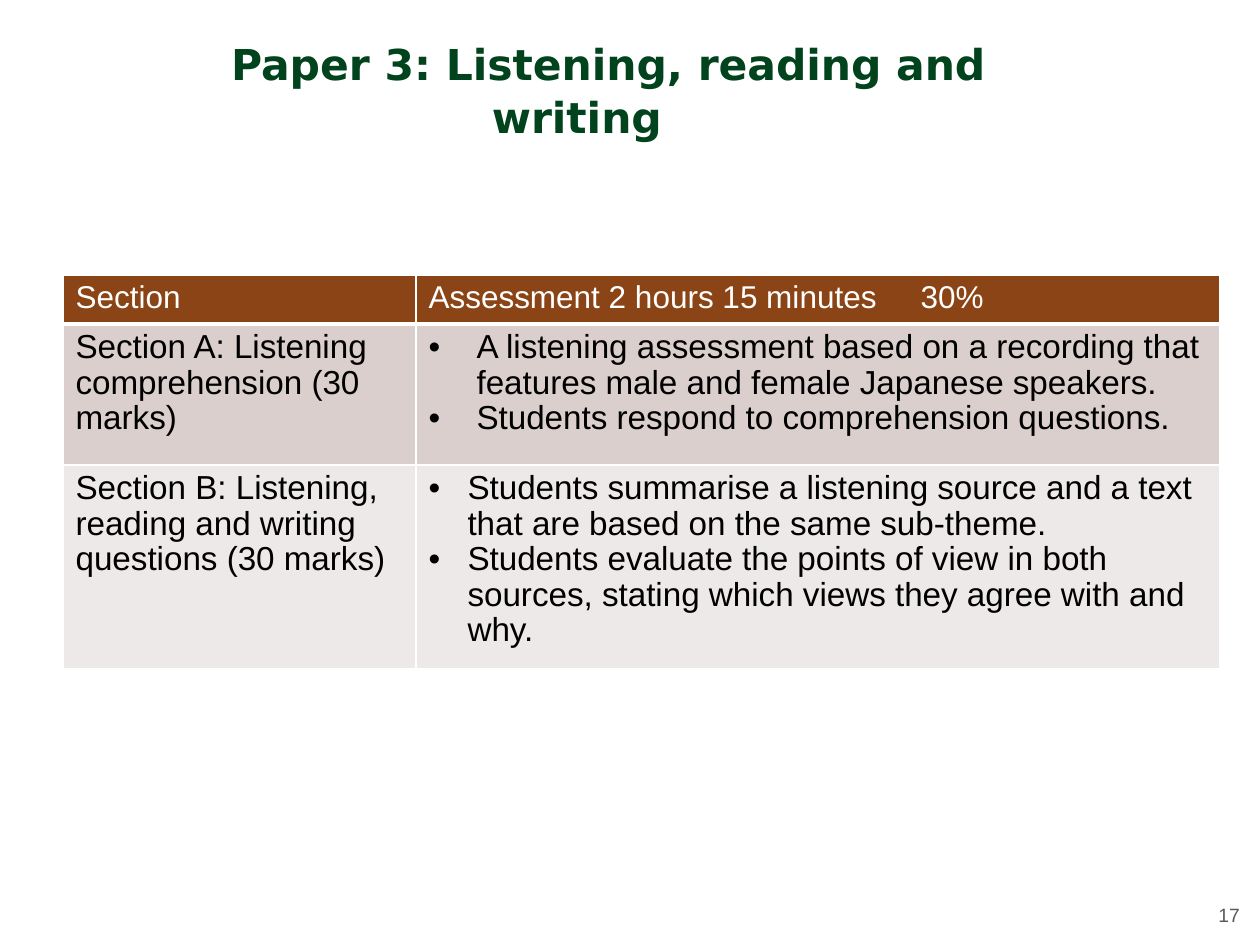
from lxml.etree import SubElement
from pptx import Presentation
from pptx.dml.color import RGBColor
from pptx.enum.text import PP_ALIGN
from pptx.oxml.ns import qn
from pptx.util import Pt

PX = 7257.6
COLORS = {
    "title": "00431C", "number": "595959", "white": "FFFFFF", "text": "000000",
    "header": "8A4415", "dark": "DACFCC", "light": "EDE9E8",
}
TITLE = "\tPaper 3: Listening, reading and writing"
PAGE_NUMBER = "17"
COLUMNS = [353, 804]
ROWS = [
    {"height": 47, "fill": "header", "color": "white", "size": 18, "tab": 492,
     "cells": [["Section"], ["Assessment 2 hours 15 minutes\t30%"]]},
    {"height": 141, "fill": "dark", "color": "text", "size": 19, "indent": 48,
     "cells": [
         ["Section A: Listening comprehension (30 marks)"],
         ["A listening assessment based on a recording that features male "
          "and female Japanese speakers.",
          "Students respond to comprehension questions."]]},
    {"height": 197, "fill": "light", "color": "text", "size": 19, "indent": 39,
     "cells": [
         ["Section B: Listening, reading and writing questions (30 marks)"],
         ["Students summarise a listening source and a text that are based "
          "on the same sub-theme.",
          "Students evaluate the points of view in both sources, stating "
          "which views they agree with and why."]]},
]


def px(value):
    return round(value * PX)


def write(para, text, size, color, font="Arial", bold=False,
          align=PP_ALIGN.LEFT, spacing=1.0, indent=0, tab=0):
    para.alignment = align
    para.line_spacing = spacing
    properties = para._p.get_or_add_pPr()
    if indent:
        properties.set("marL", str(px(indent)))
        properties.set("indent", str(-px(indent)))
        SubElement(properties, qn("a:buFont"), typeface="Arial")
        SubElement(properties, qn("a:buChar"), char="•")
    if tab:
        stops = SubElement(properties, qn("a:tabLst"))
        SubElement(stops, qn("a:tab"), pos=str(px(tab)), algn="l")
    span = para.add_run()
    span.text = text
    span.font.name = font
    span.font.size = Pt(size)
    span.font.bold = bold
    span.font.color.rgb = RGBColor.from_string(COLORS[color])


def add_text(page, area, text, margin=0, **style):
    box = page.shapes.add_textbox(*map(px, area))
    frame = box.text_frame
    frame.word_wrap = True
    frame.margin_left = frame.margin_right = px(margin)
    frame.margin_top = frame.margin_bottom = px(margin / 2)
    write(frame.paragraphs[0], text, **style)


def add_borders(cell, bottom):
    properties = cell._tc.get_or_add_tcPr()
    widths = {"a:lnL": 1, "a:lnR": 1, "a:lnT": 1, "a:lnB": bottom}
    for position, (side, width) in enumerate(widths.items()):
        line = properties.makeelement(qn(side), {"w": str(Pt(width))})
        fill = SubElement(line, qn("a:solidFill"))
        SubElement(fill, qn("a:srgbClr"), val=COLORS["white"])
        properties.insert(position, line)


def add_assessment_table(page):
    heights = [row["height"] for row in ROWS]
    table = page.shapes.add_table(
        len(ROWS), len(COLUMNS), px(63), px(275),
        px(sum(COLUMNS)), px(sum(heights))).table
    for column, width in zip(table.columns, COLUMNS):
        column.width = px(width)
    for r, row in enumerate(ROWS):
        table.rows[r].height = px(row["height"])
        for c, texts in enumerate(row["cells"]):
            cell = table.cell(r, c)
            cell.fill.solid()
            cell.fill.fore_color.rgb = RGBColor.from_string(COLORS[row["fill"]])
            add_borders(cell, bottom=3 if r == 0 else 1)
            frame = cell.text_frame
            for i, text in enumerate(texts):
                para = frame.add_paragraph() if i else frame.paragraphs[0]
                write(para, text, row["size"], row["color"], spacing=0.96,
                      indent=row.get("indent", 0) if c else 0,
                      tab=row.get("tab", 0) if c else 0)


def main():
    deck = Presentation()
    deck.slide_width, deck.slide_height = px(1260), px(945)
    page = deck.slides.add_slide(deck.slide_layouts[6])
    add_text(page, (1200, 897, 52, 37), PAGE_NUMBER, margin=12,
             size=11, color="number", align=PP_ALIGN.RIGHT)
    add_text(page, (107, 37, 940, 77), TITLE, size=24.3, color="title",
             font="DejaVu Sans", bold=True, align=PP_ALIGN.CENTER, spacing=1.03)
    add_assessment_table(page)
    deck.save("out.pptx")


if __name__ == "__main__":
    main()
